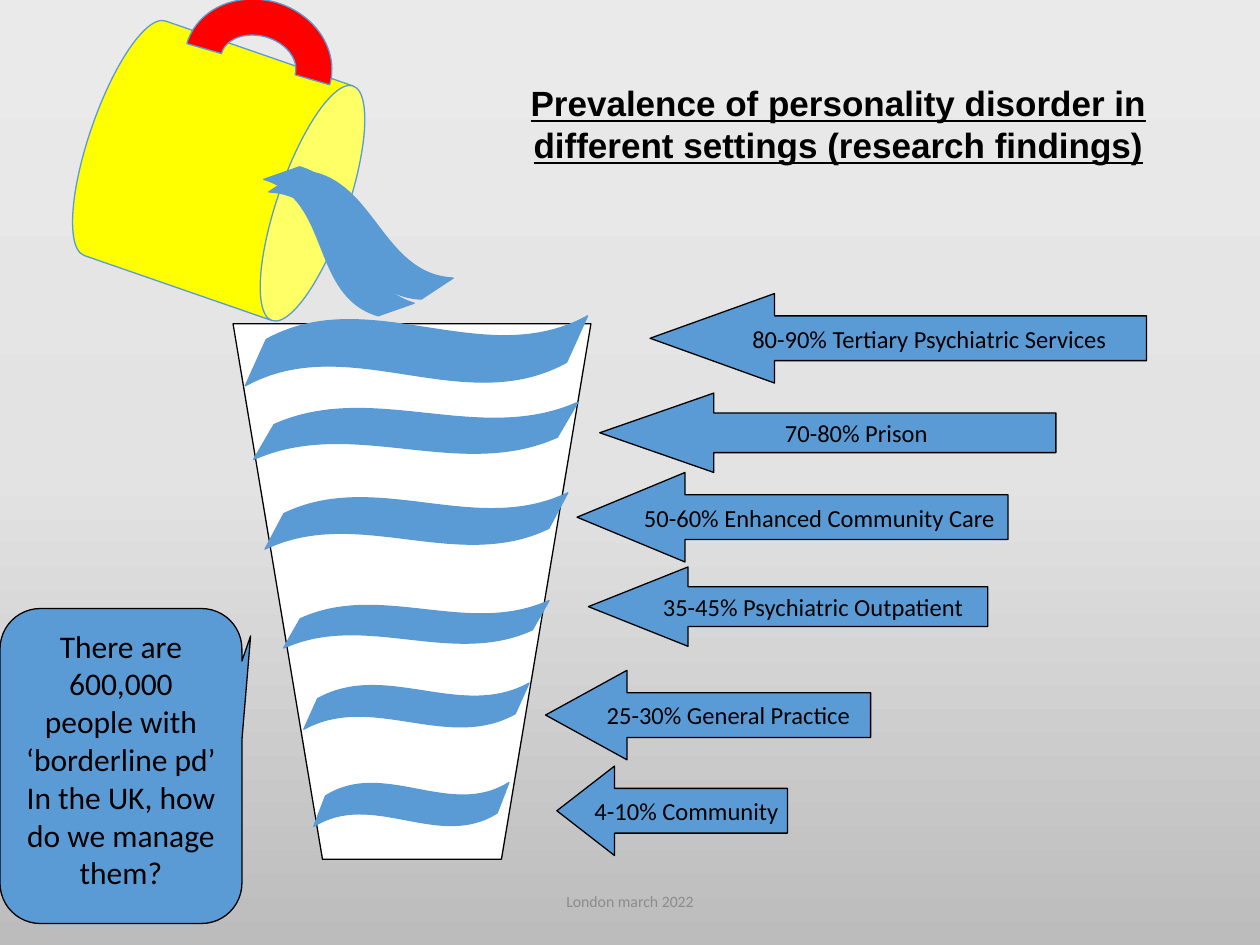
from copy import deepcopy
from pptx import Presentation
from pptx.dml.color import RGBColor
from pptx.enum.shapes import MSO_SHAPE
from pptx.enum.text import MSO_ANCHOR, PP_ALIGN
from pptx.oxml.ns import qn
from pptx.util import Inches, Pt

BLUE = RGBColor(0x5B, 0x9B, 0xD5)
BLACK = RGBColor(0, 0, 0)
WHITE = RGBColor(255, 255, 255)
YELLOW = RGBColor(255, 255, 0)
RED = RGBColor(255, 0, 0)
GREY = RGBColor(0x8C, 0x8C, 0x8C)
SHADES = [RGBColor(0xEB, 0xEA, 0xEA), RGBColor(0xE4, 0xE3, 0xE3),
          RGBColor(0xBD, 0xBC, 0xBC)]

deck = Presentation()
deck.slide_width, deck.slide_height = Inches(10), Inches(7.5)
slide = deck.slides.add_slide(deck.slide_layouts[6])
shapes = slide.shapes


def draw(kind, box, fill, line, adjust=None, turn=0):
    """Add a preset shape; adjust maps handle number to value."""
    shape = shapes.add_shape(kind, *map(Inches, box))
    for key, value in (adjust or {}).items():
        shape.adjustments[key] = value
    shape.rotation = turn
    shape.shadow.inherit = False
    shape.fill.solid()
    shape.fill.fore_color.rgb = fill
    shape.line.color.rgb = line
    shape.line.width = Pt(0.75)
    return shape


def write(shape, text, size, font="Calibri", color=BLACK,
          anchor=MSO_ANCHOR.MIDDLE, wrap=True):
    """Put centred text into a shape, one paragraph per line."""
    frame = shape.text_frame
    frame.text = text
    frame.word_wrap = wrap
    frame.vertical_anchor = anchor
    for par in frame.paragraphs:
        par.alignment = PP_ALIGN.CENTER
        par.font.size = Pt(size)
        par.font.name = font
        par.font.color.rgb = color
    return frame


# Background gradient, three stops from top to bottom
back = slide.background.fill
back.gradient()
back.gradient_angle = 270
stops = slide.element.find(".//" + qn("a:gsLst"))
stops.insert(1, deepcopy(stops[0]))
for stop, shade, place in zip(back.gradient_stops, SHADES, (0, 0.5, 1)):
    stop.color.rgb = shade
    stop.position = place

# Glass
pen = shapes.build_freeform(Inches(1.85), Inches(2.57))
pen.add_line_segments([(Inches(x), Inches(y)) for x, y in
                       ((2.56, 6.82), (3.98, 6.82), (4.69, 2.57))])
glass = pen.convert_to_shape()
glass.shadow.inherit = False
glass.fill.solid()
glass.fill.fore_color.rgb = WHITE
glass.line.color.rgb = BLACK
glass.line.width = Pt(0.75)

# Bucket and handle
draw(MSO_SHAPE.CAN, (0.75, 0.29, 1.97, 2.13), YELLOW, BLUE, {0: 0.281}, 109.1)
draw(MSO_SHAPE.BLOCK_ARC, (1.46, 0, 1.18, 1.02), RED, BLUE, {2: 0.28}, 16.1)

# Arrows: label, left, top, width, height, head length
arrows = [
    ("4-10% Community", 4.42, 6.08, 1.83, 0.71, 0.645),
    ("25-30% General Practice", 4.33, 5.32, 2.58, 0.71, 0.91),
    ("35-45% Psychiatric Outpatient", 4.67, 4.5, 3.17, 0.63, 1.256),
    ("50-60% Enhanced Community Care", 4.58, 3.75, 3.42, 0.71, 1.206),
    ("70-80% Prison", 4.76, 3.12, 3.62, 0.63, 1.437),
    ("80-90% Tertiary Psychiatric Services", 5.16, 2.33, 3.94, 0.71, 1.39),
]
for label, *box, head in arrows:
    arrow = draw(MSO_SHAPE.LEFT_ARROW, box, BLUE, BLACK, {0: 0.5, 1: head})
    write(arrow, label, 14, wrap=False)

# Title
title = shapes.add_textbox(Inches(3.82), Inches(0.6), Inches(5.67), Inches(0.77))
frame = write(title, "Prevalence of personality disorder in different settings "
              "(research findings)", 20, "Arial", anchor=MSO_ANCHOR.TOP)
frame.paragraphs[0].font.bold = True
frame.paragraphs[0].font.underline = True

# Water: two pouring waves, then the levels in the glass
waves = [
    (2.07, 1.63, 1.59, 0.47, 35.1),
    (1.93, 1.68, 1.52, 0.47, 50),
    (2.24, 4.77, 2.13, 0.37, 355.8),
    (2.4, 5.41, 1.81, 0.39, 355.8),
    (2.48, 6.19, 1.57, 0.39, 355.8),
    (2.09, 3.91, 2.43, 0.45, 355.8),
    (2, 3.2, 2.6, 0.44, 355.8),
    (1.93, 2.49, 2.75, 0.59, 355.8),
]
for *box, turn in waves:
    draw(MSO_SHAPE.WAVE, box, BLUE, BLUE, {0: 0.206, 1: -0.035}, turn)

# Callout
note = draw(MSO_SHAPE.ROUNDED_RECTANGULAR_CALLOUT, (0, 4.83, 1.92, 2.5),
            BLUE, BLACK, {0: 0.536, 1: -0.413, 2: 0.167})
write(note, "There are 600,000 people with ‘borderline pd’\n"
      "In the UK, how do we manage them?", 18, anchor=MSO_ANCHOR.TOP)

# Footer
foot = shapes.add_textbox(Inches(3.31), Inches(6.95), Inches(3.38), Inches(0.4))
write(foot, "London march 2022", 9, color=GREY)

deck.save("out.pptx")
